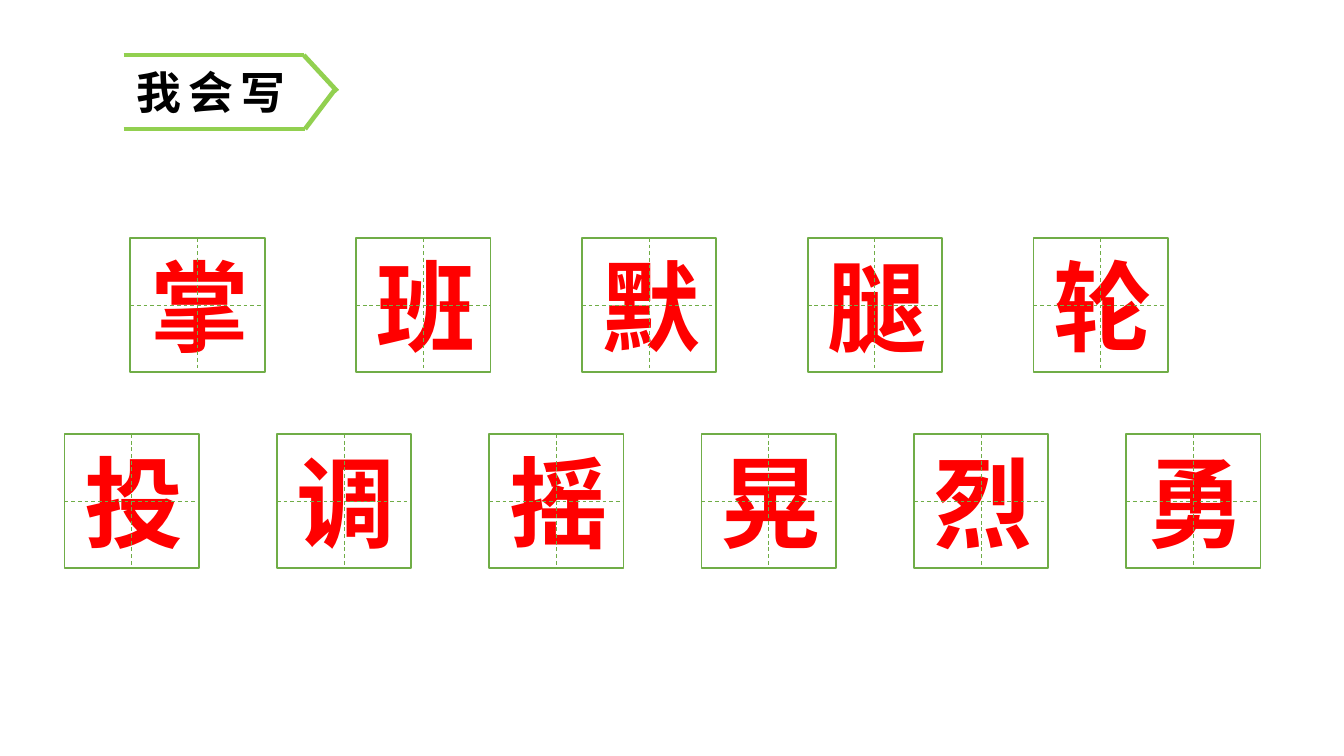
from lxml import etree
from pptx import Presentation
from pptx.dml.color import RGBColor
from pptx.enum.dml import MSO_LINE
from pptx.enum.shapes import MSO_CONNECTOR, MSO_SHAPE
from pptx.enum.text import MSO_ANCHOR, PP_ALIGN
from pptx.oxml.ns import qn
from pptx.util import Inches, Pt

RECT = MSO_SHAPE.RECTANGLE
STRAIGHT = MSO_CONNECTOR.STRAIGHT
DASH = MSO_LINE.DASH
MIDDLE = MSO_ANCHOR.MIDDLE
LEFT = PP_ALIGN.LEFT
FONT = "Noto Sans CJK SC"
COLORS = {"banner": "92D050", "grid": "70AD47", "char": "FF0000",
          "title": "000000", "white": "FFFFFF"}
CELL = 1.0
ROWS = [("掌班默腿轮", 0.97, 1.77, 1.68), ("投调摇晃烈勇", 0.48, 3.23, 1.58)]
TOP_LINE, BOTTOM_LINE = ((0.92, 0.41), (2.26, 0.41)), ((0.92, 0.96), (2.27, 0.96))
TIP_LINES = [((2.26, 0.41), (2.51, 0.68)), ((2.27, 0.96), (2.49, 0.67))]


def color(name):
    """Return the named colour."""
    return RGBColor.from_string(COLORS[name])


def add_line(shapes, start, end, line_color, width, dash=None):
    """Draw a straight line between two points given in inches."""
    line = shapes.add_connector(STRAIGHT, *map(Inches, (*start, *end)))
    line.line.color.rgb = color(line_color)
    line.line.width = Pt(width)
    if dash:
        line.line.dash_style = dash
    etree.SubElement(line._element.spPr, qn("a:effectLst"))


def add_frame(shapes, x, y, w, h, line_color, width):
    """Draw an unfilled rectangle and return it."""
    sp = shapes.add_shape(RECT, *map(Inches, (x, y, w, h)))
    sp.shadow.inherit = False
    sp.fill.background()
    sp.line.color.rgb = color(line_color)
    sp.line.width = Pt(width)
    return sp


def set_text(sp, text, size, text_color, wrap=False, spacing=0):
    """Fill a shape with bold text, left aligned and centred vertically."""
    tf = sp.text_frame
    tf.text = text
    tf.word_wrap = wrap
    tf.vertical_anchor = MIDDLE
    p = tf.paragraphs[0]
    p.alignment = LEFT
    r = p.runs[0]
    r.font.size = Pt(size)
    r.font.bold = True
    r.font.name = FONT
    r.font.color.rgb = color(text_color)
    rPr = r._r.get_or_add_rPr()
    etree.SubElement(rPr, qn("a:ea")).set("typeface", FONT)
    if spacing:
        rPr.set("spc", str(round(spacing * 100)))


def add_banner(s, title):
    """Draw the arrow-shaped banner with its title."""
    shapes = s.shapes.add_group_shape().shapes
    for start, end in (TOP_LINE, BOTTOM_LINE):
        add_line(shapes, start, end, "banner", 2.5)
    sp = add_frame(shapes, 0.92, 0.43, 1.84, 0.5, "white", 0.75)
    set_text(sp, title, 24, "title", wrap=True, spacing=3.8)
    for start, end in TIP_LINES:
        add_line(shapes, start, end, "banner", 2.5)


def add_practice_cell(s, char, x, y):
    """Draw a character in a square with dashed centre lines."""
    shapes = s.shapes.add_group_shape().shapes
    half = CELL / 2
    sp = shapes.add_textbox(*map(Inches, (x + 0.05, y, 0.95, 0.99)))
    set_text(sp, char, 53, "char")
    add_frame(shapes, x, y, CELL, CELL, "grid", 1)
    add_line(shapes, (x, y + half), (x + CELL, y + half), "grid", 0.5, DASH)
    add_line(shapes, (x + half, y), (x + half, y + CELL), "grid", 0.5, DASH)


def main():
    """Build the slide and save it."""
    prs = Presentation()
    prs.slide_width = Inches(10)
    prs.slide_height = Inches(10 * 9 / 16)
    s = prs.slides.add_slide(prs.slide_layouts[6])
    add_banner(s, "我会写")
    for chars, left, top, pitch in ROWS:
        for i, char in enumerate(chars):
            add_practice_cell(s, char, left + i * pitch, top)
    prs.save("out.pptx")


if __name__ == "__main__":
    main()
